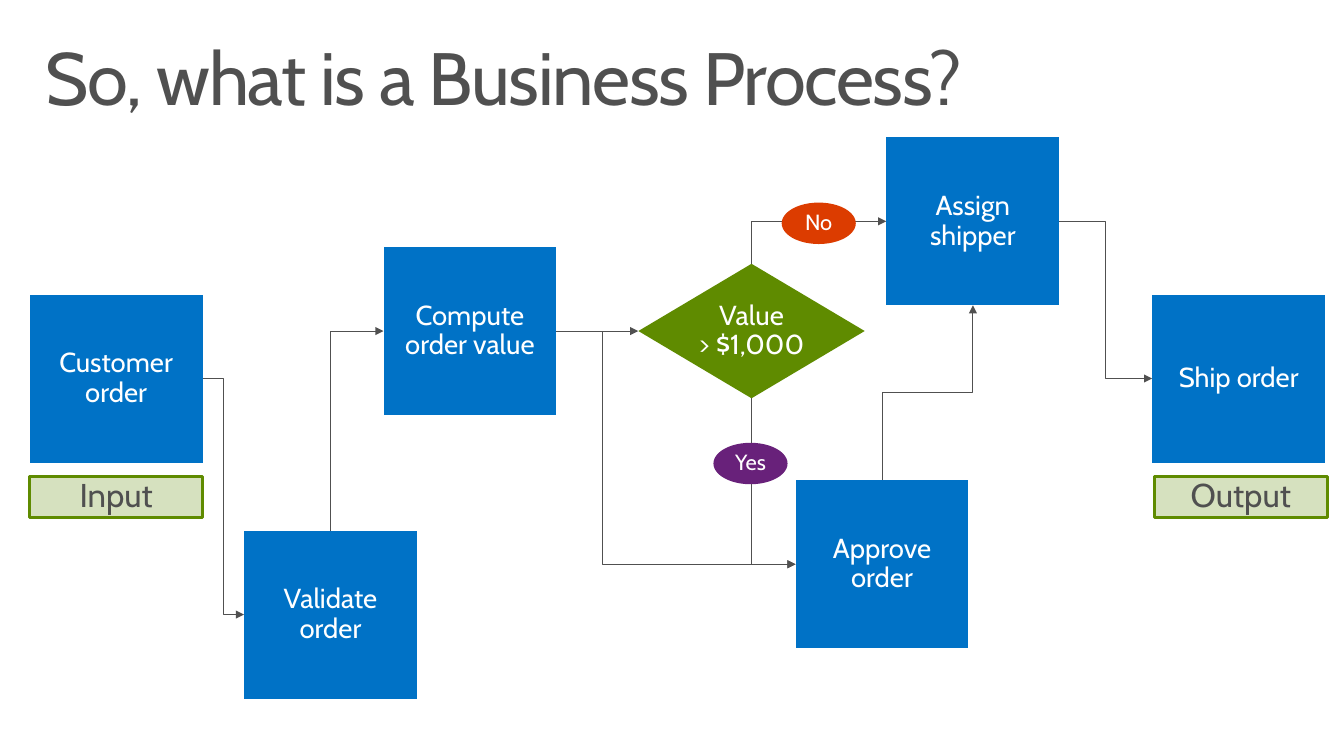
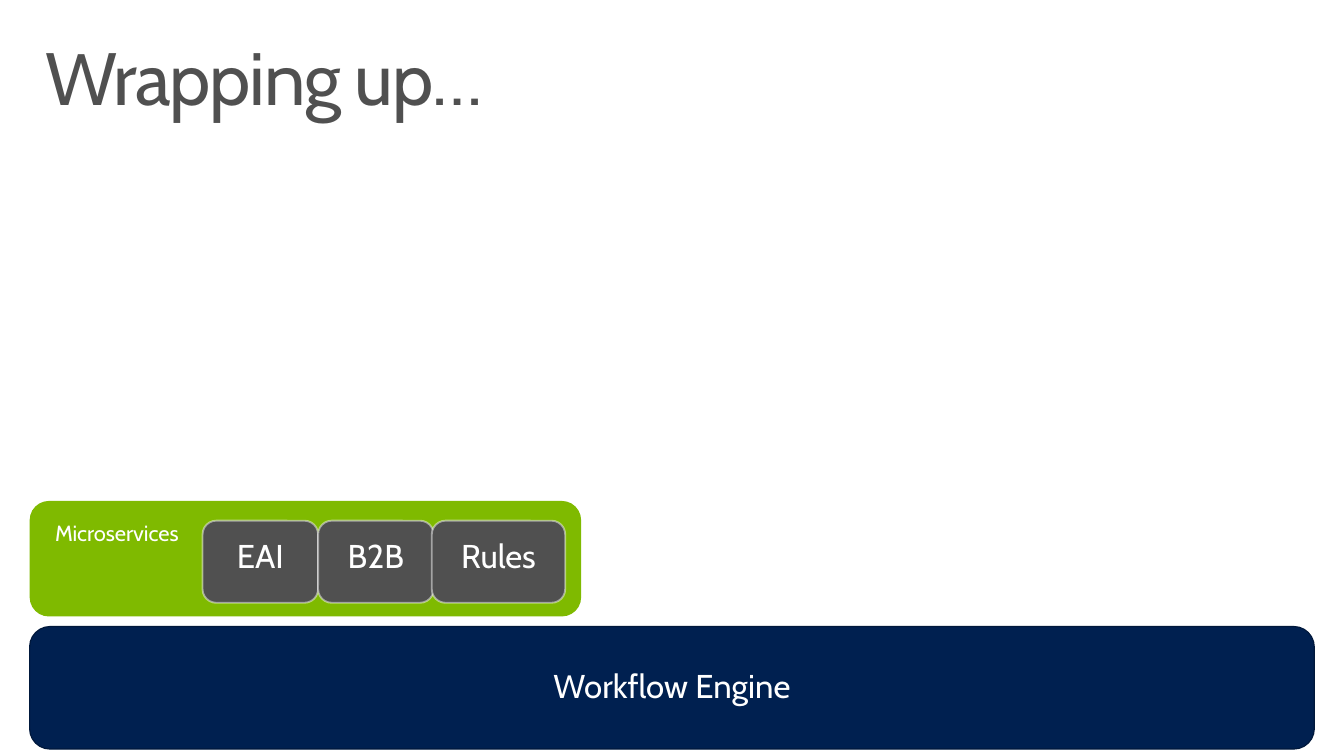
from lxml.etree import SubElement
from pptx import Presentation
from pptx.dml.color import RGBColor
from pptx.enum.shapes import MSO_CONNECTOR as CONN, MSO_SHAPE as SHAPE
from pptx.enum.text import MSO_ANCHOR as ANCHOR, PP_ALIGN as ALIGN
from pptx.oxml.ns import qn
from pptx.util import Pt

FONT = "Cabin"
GREY, WHITE, BLUE, GREEN = "505050", "FFFFFF", "0072C6", "5F8B00"
PURPLE, ORANGE, LIME, NAVY = "68217A", "DC3C00", "7FBA00", "002050"
MARGIN = 21.6
CONTENT_W = 936
INSETS = (14.4, 11.5)
TOP, LEFT, BOTTOM, RIGHT = range(4)


def rgb(value):
    return RGBColor.from_string(value)


def set_alpha(element, percent):
    """Make the colour inside a fill or line element partly transparent."""
    color = element.find(".//" + qn("a:srgbClr"))
    SubElement(color, qn("a:alpha")).set("val", str(percent * 1000))


class Deck:
    def __init__(self):
        self.prs = Presentation()
        self.prs.slide_width, self.prs.slide_height = Pt(979.2), Pt(550.8)
        self.s = None

    def new_slide(self, title):
        self.s = self.prs.slides.add_slide(self.prs.slide_layouts[6])
        box = self.s.shapes.add_textbox(Pt(MARGIN), Pt(23), Pt(CONTENT_W), Pt(72))
        self.set_text(box.text_frame, title, 54, GREY, ALIGN.LEFT, ANCHOR.TOP,
                      (11.5, 7.2), spacing=-100)

    def set_text(self, tf, text, size, color, align, anchor, insets, spacing=None):
        tf.word_wrap = True
        tf.vertical_anchor = anchor
        tf.margin_left = tf.margin_right = Pt(insets[0])
        tf.margin_top = tf.margin_bottom = Pt(insets[1])
        p = tf.paragraphs[0]
        p.alignment = align
        p.line_spacing = 0.9
        for i, line in enumerate(text.split("\n")):
            if i:
                p.add_line_break()
            r = p.add_run()
            r.text = line
            r.font.name, r.font.size = FONT, Pt(size)
            r.font.color.rgb = rgb(color)
            if spacing is not None:
                r.font._element.set("spc", str(spacing))

    def shape(self, kind, x, y, w, h, text, fill, size=20, color=WHITE,
              line=None, line_w=1, fill_alpha=None, line_alpha=None,
              align=ALIGN.CENTER, anchor=ANCHOR.MIDDLE, insets=INSETS):
        sp = self.s.shapes.add_shape(kind, Pt(x), Pt(y), Pt(w), Pt(h))
        sp.shadow.inherit = False
        sp.fill.solid()
        sp.fill.fore_color.rgb = rgb(fill)
        if fill_alpha:
            set_alpha(sp._element.spPr.find(qn("a:solidFill")), fill_alpha)
        if line:
            sp.line.color.rgb = rgb(line)
            sp.line.width = Pt(line_w)
            if line_alpha:
                set_alpha(sp._element.spPr.find(qn("a:ln")), line_alpha)
        else:
            sp.line.fill.background()
        self.set_text(sp.text_frame, text, size, color, align, anchor, insets)
        return sp

    def step(self, x, y, text):
        return self.shape(SHAPE.FLOWCHART_PROCESS, x, y, 126, 122.4, text, BLUE)

    def tag(self, x, text):
        self.shape(SHAPE.FLOWCHART_PROCESS, x, 347, 126, 30.2, text, GREEN, 24,
                   GREY, line=GREEN, line_w=2, fill_alpha=25)

    def answer(self, x, y, text, fill):
        self.shape(SHAPE.OVAL, x, y, 54, 30.2, text, fill, 16, insets=(0, 0))

    def service(self, x, w, text):
        self.shape(SHAPE.ROUNDED_RECTANGLE, x, 379.4, w, 59.8, text, GREY, 24,
                   line="F9F9F9", line_w=1.35, line_alpha=50, anchor=ANCHOR.TOP)

    def arrow(self, start, start_side, end, end_side, kind=CONN.ELBOW, bend=None):
        """Join two shapes; bend is the place of the elbow, from 0 to 1."""
        c = self.s.shapes.add_connector(kind, 0, 0, 0, 0)
        c.begin_connect(start, start_side)
        c.end_connect(end, end_side)
        c.line.color.rgb = rgb(GREY)
        c.line.width = Pt(0.75)
        spPr = c._element.spPr
        SubElement(spPr.find(qn("a:ln")), qn("a:tailEnd")).set("type", "triangle")
        SubElement(spPr, qn("a:effectLst"))
        geom = spPr.find(qn("a:prstGeom"))
        if start_side % 2 != end_side % 2:
            geom.set("prst", "bentConnector2")
        if bend is not None:
            guide = SubElement(geom.find(qn("a:avLst")), qn("a:gd"))
            guide.set("name", "adj1")
            guide.set("fmla", f"val {round(bend * 100000)}")
        if start_side in (TOP, BOTTOM):
            self.turn(c)

    def turn(self, c):
        """Rotate an elbow by 90 degrees so that it leaves vertically."""
        dx, dy = c.end_x - c.begin_x, c.end_y - c.begin_y
        mid_x, mid_y = (c.begin_x + c.end_x) // 2, (c.begin_y + c.end_y) // 2
        c.begin_x, c.begin_y = mid_x - dy // 2, mid_y + dx // 2
        c.end_x, c.end_y = mid_x + dy // 2, mid_y - dx // 2
        c._element.spPr.find(qn("a:xfrm")).set("rot", "5400000")


def process_slide(deck):
    deck.new_slide("So, what is a Business Process?")
    customer = deck.step(MARGIN, 214.6, "Customer order")
    validate = deck.step(177.8, 386.6, "Validate order")
    compute = deck.step(279.4, 180, "Compute order value")
    approve = deck.step(579.6, 349.9, "Approve order")
    assign = deck.step(645.8, 100.1, "Assign shipper")
    ship = deck.step(839.5, 214.6, "Ship order")
    decision = deck.shape(SHAPE.DIAMOND, 465.1, 192.2, 164.9, 98,
                          "Value\n> $1,000", GREEN, insets=(0, 0))
    deck.tag(MARGIN, "Input")
    deck.tag(841, "Output")

    deck.arrow(customer, RIGHT, validate, LEFT)
    deck.arrow(validate, TOP, compute, LEFT)
    deck.arrow(compute, RIGHT, decision, LEFT, CONN.STRAIGHT)
    deck.arrow(compute, RIGHT, approve, LEFT, bend=0.194)
    deck.arrow(decision, TOP, assign, LEFT)
    deck.arrow(decision, BOTTOM, approve, LEFT)
    deck.arrow(approve, TOP, assign, BOTTOM, bend=0.5)
    deck.arrow(assign, RIGHT, ship, LEFT)

    deck.answer(519.8, 322.6, "Yes", PURPLE)
    deck.answer(569.5, 147.6, "No", ORANGE)


def summary_slide(deck):
    deck.new_slide("Wrapping up…")
    deck.shape(SHAPE.ROUNDED_RECTANGLE, MARGIN, 456.5, CONTENT_W, 89.3,
               "Workflow Engine", NAVY, 24, line="00183B", line_w=0.85)
    deck.shape(SHAPE.ROUNDED_RECTANGLE, MARGIN, 365, 401.8, 84.2,
               "Microservices", LIME, 16, align=ALIGN.LEFT, anchor=ANCHOR.TOP)
    for x, w, text in ((147.6, 84.2, "EAI"), (231.8, 84.2, "B2B"),
                       (314.6, 97.2, "Rules")):
        deck.service(x, w, text)


def main():
    deck = Deck()
    process_slide(deck)
    summary_slide(deck)
    deck.prs.save("out.pptx")


if __name__ == "__main__":
    main()
